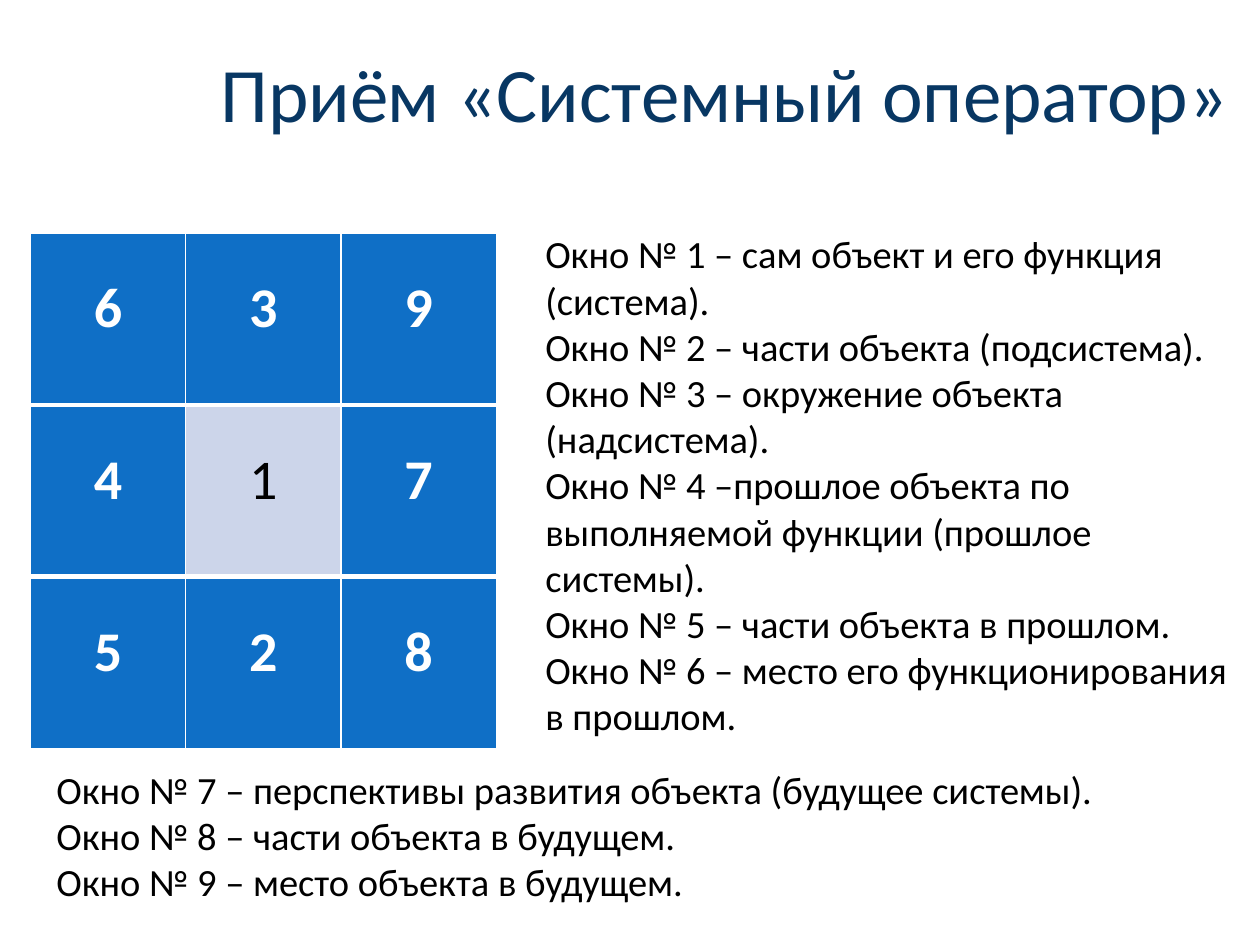
from lxml import etree
from pptx import Presentation
from pptx import util as u
from pptx.dml.color import RGBColor
from pptx.enum import text
from pptx.oxml import ns

FONT = "Calibri"
COLORS = {
    "title": "083763",
    "text": "000000",
    "window": "0F6FC6",
    "center": "CCD5EA",
    "white": "FFFFFF",
}
WINDOWS = [[6, 3, 9], [4, 1, 7], [5, 2, 8]]
CENTER = 1
SIDE_NOTES = [
    "Окно № 1 – сам объект и его функция (система).",
    "Окно № 2 – части объекта (подсистема).",
    "Окно № 3 – окружение объекта (надсистема).",
    "Окно № 4 –прошлое объекта по выполняемой функции (прошлое системы).",
    "Окно № 5 – части объекта в прошлом.",
    "Окно № 6 – место его функционирования в прошлом.",
]
BOTTOM_NOTES = [
    "Окно № 7 – перспективы развития объекта (будущее системы).",
    "Окно № 8 – части объекта в будущем.",
    "Окно № 9 – место объекта в будущем.",
]


def style_text(text_frame, size, color, bold=False):
    for paragraph in text_frame.paragraphs:
        for run in paragraph.runs:
            run.font.name = FONT
            run.font.size = u.Pt(size)
            run.font.bold = bold
            run.font.color.rgb = RGBColor.from_string(COLORS[color])


def add_text(slide, box, lines, size, color, wrap=True):
    shape = slide.shapes.add_textbox(*map(u.Inches, box))
    text_frame = shape.text_frame
    text_frame.word_wrap = wrap
    text_frame.auto_size = text.MSO_AUTO_SIZE.SHAPE_TO_FIT_TEXT
    text_frame.text = "\n".join(lines)
    style_text(text_frame, size, color)


def add_border(cell, side, width):
    properties = cell._tc.get_or_add_tcPr()
    line = etree.SubElement(properties, ns.qn(f"a:ln{side}"), w=str(u.Pt(width)))
    fill = etree.SubElement(line, ns.qn("a:solidFill"))
    etree.SubElement(fill, ns.qn("a:srgbClr"), val=COLORS["white"])


def fill_window(cell, number, row):
    is_center = number == CENTER
    widths = {"L": 1, "R": 1, "T": 3 if row > 0 else 1, "B": 3 if row < 2 else 1}
    for side, width in widths.items():
        add_border(cell, side, width)
    cell.fill.solid()
    cell.fill.fore_color.rgb = RGBColor.from_string(
        COLORS["center" if is_center else "window"])
    cell.margin_left = cell.margin_right = u.Inches(0.07)
    cell.margin_top = u.Inches(0.33)
    cell.margin_bottom = 0
    cell.text_frame.text = str(number)
    cell.text_frame.paragraphs[0].alignment = text.PP_ALIGN.CENTER
    style_text(cell.text_frame, 32, "text" if is_center else "white", not is_center)


def add_windows(slide, box):
    size = len(WINDOWS)
    table = slide.shapes.add_table(size, size, *map(u.Inches, box)).table
    for column in table.columns:
        column.width = u.Inches(box[2] / size)
    for row, numbers in enumerate(WINDOWS):
        table.rows[row].height = u.Inches(box[3] / size)
        for column, number in enumerate(numbers):
            fill_window(table.cell(row, column), number, row)


def main():
    presentation = Presentation()
    presentation.slide_width = u.Inches(10)
    presentation.slide_height = u.Inches(7.5)
    slide = presentation.slides.add_slide(presentation.slide_layouts[6])
    add_text(slide, (1.65, 0.31, 8.49, 0.84), ["Приём «Системный оператор»"],
             44, "title", wrap=False)
    add_windows(slide, (0.24, 1.85, 3.7, 4.09))
    add_text(slide, (4.23, 1.78, 5.63, 4.54), SIDE_NOTES, 22, "text")
    add_text(slide, (0.35, 6.03, 10.96, 1.62), BOTTOM_NOTES, 22, "text")
    presentation.save("out.pptx")


if __name__ == "__main__":
    main()
